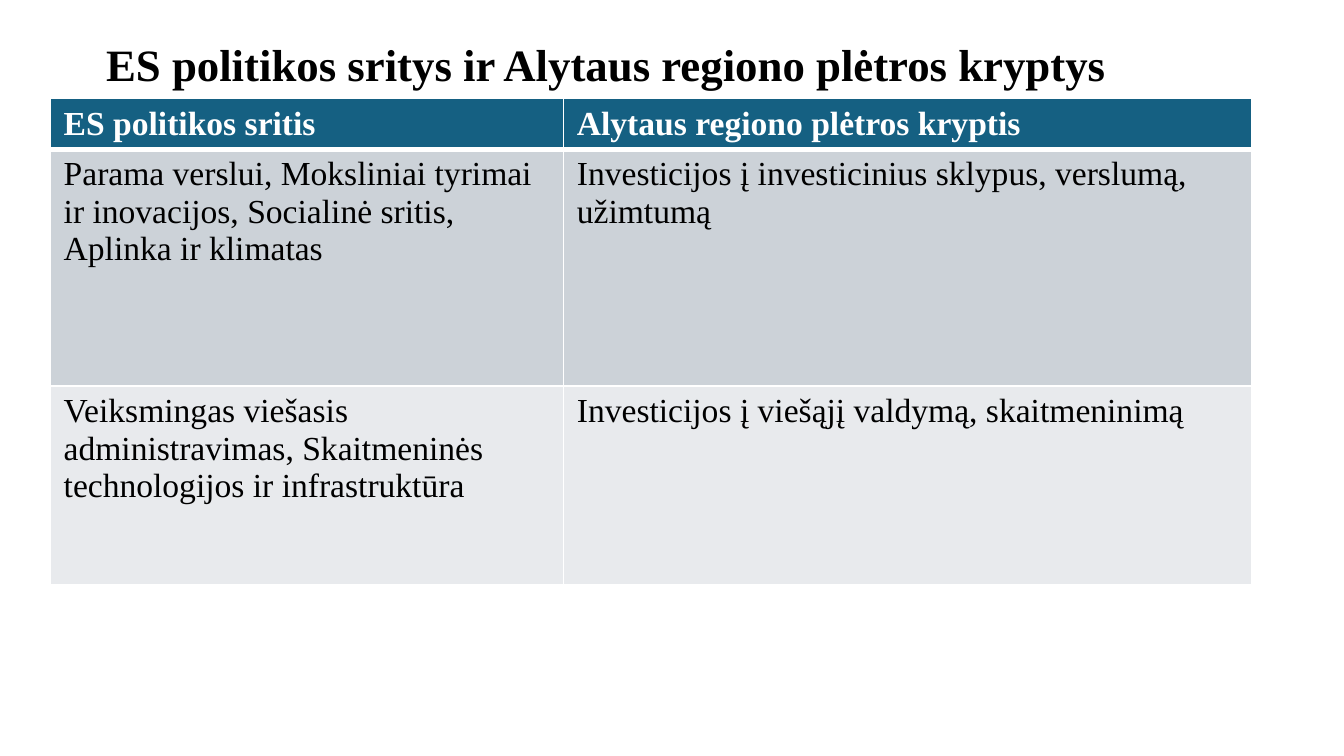
from dataclasses import dataclass

from lxml.etree import SubElement
from pptx import Presentation
from pptx.dml.color import RGBColor
from pptx.enum.text import MSO_ANCHOR, PP_ALIGN
from pptx.oxml.ns import qn
from pptx.util import Cm, Pt

FONT = "Times New Roman"
WHITE = "FFFFFF"
BLACK = "000000"
HEADER_RULE = 3
GRID_RULE = 1


@dataclass(frozen=True)
class PolicyRow:
    policy_area: str
    direction: str
    height: float
    fill: str
    color: str = BLACK
    bold: bool = False
    top_rule: int = GRID_RULE
    bottom_rule: int = GRID_RULE


POLICY_ROWS = [
    PolicyRow("ES politikos sritis", "Alytaus regiono plėtros kryptis",
              0.96, "156082", WHITE, True, bottom_rule=HEADER_RULE),
    PolicyRow("Parama verslui, Moksliniai tyrimai ir inovacijos, "
              "Socialinė sritis, Aplinka ir klimatas",
              "Investicijos į investicinius sklypus, verslumą, užimtumą",
              4.48, "CCD2D8", top_rule=HEADER_RULE),
    PolicyRow("Veiksmingas viešasis administravimas, "
              "Skaitmeninės technologijos ir infrastruktūra",
              "Investicijos į viešąjį valdymą, skaitmeninimą",
              3.76, "E8EAED"),
]
COLUMN_WIDTHS = [9.7, 13]


def paint(color_format, color: str) -> None:
    color_format.rgb = RGBColor.from_string(color)


def write(frame, text: str, *, size: float, color: str = BLACK,
          bold: bool = False, line_spacing: float = 1.0) -> None:
    paragraph = frame.paragraphs[0]
    paragraph.alignment = PP_ALIGN.LEFT
    paragraph.line_spacing = line_spacing
    run = paragraph.add_run()
    run.text = text
    run.font.name = FONT
    run.font.size = Pt(size)
    run.font.bold = bold
    paint(run.font.color, color)


def rule_cell(cell, top: int, bottom: int) -> None:
    properties = cell._tc.get_or_add_tcPr()
    sides = {"L": GRID_RULE, "R": GRID_RULE, "T": top, "B": bottom}
    for side, width in sides.items():
        line = SubElement(properties, qn(f"a:ln{side}"), w=str(Pt(width)))
        SubElement(SubElement(line, qn("a:solidFill")), qn("a:srgbClr"), val=WHITE)


def draw_row(table, index: int, policy: PolicyRow) -> None:
    table.rows[index].height = Cm(policy.height)
    for cell, text in zip(table.rows[index].cells,
                          (policy.policy_area, policy.direction)):
        rule_cell(cell, policy.top_rule, policy.bottom_rule)
        cell.fill.solid()
        paint(cell.fill.fore_color, policy.fill)
        write(cell.text_frame, text, size=18, color=policy.color, bold=policy.bold)


def draw_title(title) -> None:
    title.left, title.top = Cm(1.75), Cm(0.76)
    title.width, title.height = Cm(21.9), Cm(1)
    title.text_frame.vertical_anchor = MSO_ANCHOR.MIDDLE
    write(title.text_frame, "ES politikos sritys ir Alytaus regiono plėtros kryptys",
          size=24, bold=True, line_spacing=0.9)


def main() -> None:
    deck = Presentation()
    deck.slide_width, deck.slide_height = Cm(25.4), Cm(14.29)
    slide = deck.slides.add_slide(deck.slide_layouts[5])
    draw_title(slide.shapes.title)

    policies = slide.shapes.add_table(
        len(POLICY_ROWS), len(COLUMN_WIDTHS), Cm(0.95), Cm(1.86),
        Cm(sum(COLUMN_WIDTHS)), Cm(sum(row.height for row in POLICY_ROWS))).table
    for column, width in zip(policies.columns, COLUMN_WIDTHS):
        column.width = Cm(width)
    for index, policy in enumerate(POLICY_ROWS):
        draw_row(policies, index, policy)

    deck.save("out.pptx")


if __name__ == "__main__":
    main()
